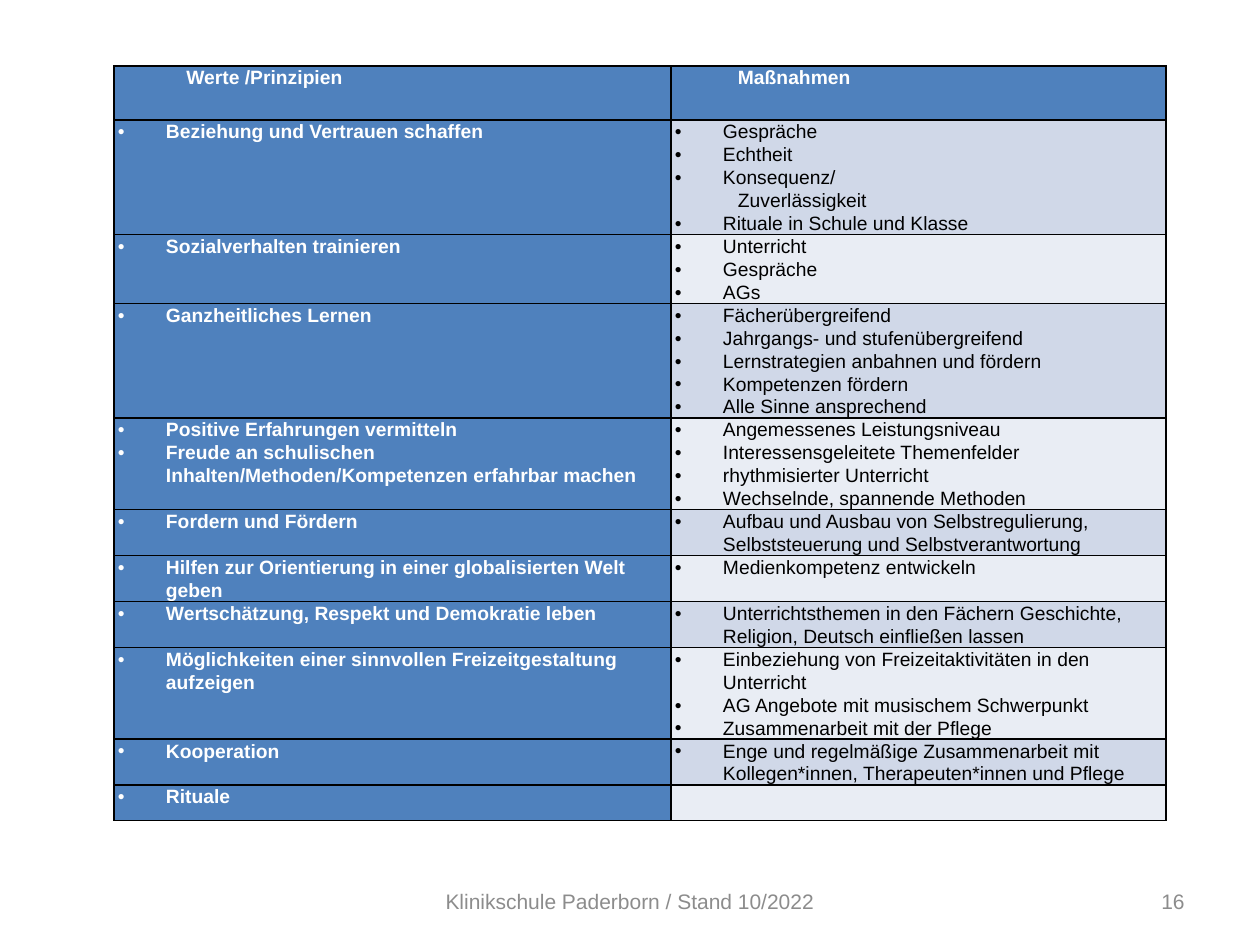
from dataclasses import dataclass

from lxml.etree import SubElement
from pptx import Presentation
from pptx.dml.color import RGBColor
from pptx.enum.text import MSO_ANCHOR as Anchor, PP_ALIGN as Align
from pptx.oxml.ns import qn
from pptx.util import Pt

PX = 914400 // 126


@dataclass(frozen=True)
class Theme:
    """Colours, font and type sizes of the slide."""
    font: str = "Arial"
    table_size: int = 11
    footer_size: int = 12
    head: str = "4F81BD"
    bands: tuple = ("D0D8E8", "E9EDF4")
    light: str = "FFFFFF"
    dark: str = "000000"
    muted: str = "8C8C8C"


THEME = Theme()
BULLET, INDENT = 48, 63
LINE, HEADER = 22, 54
HEADINGS = (" Werte /Prinzipien", "Maßnahmen")
INDENTED = {*HEADINGS, "Zuverlässigkeit"}
ROWS = [
    (5, ["Beziehung und Vertrauen schaffen"],
     ["Gespräche", "Echtheit", "Konsequenz/", "Zuverlässigkeit", "Rituale in Schule und Klasse"]),
    (3, ["Sozialverhalten trainieren"], ["Unterricht", "Gespräche", "AGs"]),
    (5, ["Ganzheitliches Lernen"],
     ["Fächerübergreifend", "Jahrgangs- und stufenübergreifend",
      "Lernstrategien anbahnen und fördern", "Kompetenzen fördern", "Alle Sinne ansprechend"]),
    (4, ["Positive Erfahrungen vermitteln",
         "Freude an schulischen Inhalten/Methoden/Kompetenzen erfahrbar machen"],
     ["Angemessenes Leistungsniveau", "Interessensgeleitete Themenfelder",
      "rhythmisierter Unterricht", "Wechselnde, spannende Methoden"]),
    (2, ["Fordern und Fördern"],
     ["Aufbau und Ausbau von Selbstregulierung, Selbststeuerung und Selbstverantwortung"]),
    (2, ["Hilfen zur Orientierung in einer globalisierten Welt geben"],
     ["Medienkompetenz entwickeln"]),
    (2, ["Wertschätzung, Respekt und Demokratie leben"],
     ["Unterrichtsthemen in den Fächern Geschichte, Religion, Deutsch einfließen lassen"]),
    (4, ["Möglichkeiten einer sinnvollen Freizeitgestaltung aufzeigen"],
     ["Einbeziehung von Freizeitaktivitäten in den Unterricht",
      "AG Angebote mit musischem Schwerpunkt", "Zusammenarbeit mit der Pflege"]),
    (2, ["Kooperation"],
     ["Enge und regelmäßige Zusammenarbeit mit Kollegen*innen, Therapeuten*innen und Pflege"]),
    (1, ["Rituale"], [""]),
]


def apply(target, values):
    """Set each attribute of the target from a dict."""
    for name, value in values.items():
        setattr(target, name, value)


def add_run(paragraph, text, size, color, bold=False):
    """Append one formatted run to a paragraph."""
    run = paragraph.add_run()
    run.text = text
    apply(run.font, {"name": THEME.font, "size": Pt(size), "bold": bold})
    run.font.color.rgb = RGBColor.from_string(color)


def set_indent(paragraph, bulleted):
    """Give a paragraph a hanging bullet or a plain left indent."""
    properties = paragraph._p.get_or_add_pPr()
    properties.set("marL", str((BULLET if bulleted else INDENT) * PX))
    properties.set("indent", str(-BULLET * PX if bulleted else 0))
    if bulleted:
        SubElement(properties, qn("a:buFont"), typeface=THEME.font)
        SubElement(properties, qn("a:buChar"), char="•")
    else:
        SubElement(properties, qn("a:buNone"))


def add_borders(cell):
    """Draw a one-point line on all four sides of a cell."""
    properties = cell._tc.get_or_add_tcPr()
    for side in ("lnL", "lnR", "lnT", "lnB"):
        line = SubElement(properties, qn(f"a:{side}"), w=str(Pt(1)))
        fill = SubElement(line, qn("a:solidFill"))
        SubElement(fill, qn("a:srgbClr"), val=THEME.dark)


def fill_cell(cell, texts, background, color, bold):
    """Write the paragraphs of a cell and format it."""
    apply(cell, {"margin_left": 4 * PX, "margin_right": 4 * PX,
                 "margin_top": 0, "margin_bottom": 0})
    add_borders(cell)
    cell.fill.solid()
    cell.fill.fore_color.rgb = RGBColor.from_string(background)
    frame = cell.text_frame
    for index, text in enumerate(texts):
        paragraph = frame.add_paragraph() if index else frame.paragraphs[0]
        paragraph.line_spacing = 1.07
        set_indent(paragraph, text not in INDENTED)
        add_run(paragraph, text, THEME.table_size, color, bold)


def add_values_table(slide, left, top, widths):
    """Place the table of values and measures."""
    heights = [HEADER] + [LINE * lines for lines, *_ in ROWS]
    box = (left, top, sum(widths), sum(heights))
    table = slide.shapes.add_table(len(heights), len(widths), *(n * PX for n in box)).table
    apply(table, {"first_row": False, "horz_banding": False})
    for column, width in zip(table.columns, widths):
        column.width = width * PX
    for row, height in zip(table.rows, heights):
        row.height = height * PX
    for column, heading in enumerate(HEADINGS):
        fill_cell(table.cell(0, column), [heading], THEME.head, THEME.light, True)
    for index, (_, values, measures) in enumerate(ROWS):
        fill_cell(table.cell(index + 1, 0), values, THEME.head, THEME.light, True)
        fill_cell(table.cell(index + 1, 1), measures, THEME.bands[index % 2], THEME.dark, False)


def add_footer_text(slide, box, text, alignment):
    """Place one muted line of footer text in its box."""
    frame = slide.shapes.add_textbox(*(n * PX for n in box)).text_frame
    apply(frame, {"word_wrap": True, "vertical_anchor": Anchor.MIDDLE})
    frame.paragraphs[0].alignment = alignment
    add_run(frame.paragraphs[0], text, THEME.footer_size, THEME.muted)


def main():
    """Build and save the slide."""
    presentation = Presentation()
    apply(presentation, {"slide_width": 1260 * PX, "slide_height": 945 * PX})
    slide = presentation.slides.add_slide(presentation.slide_layouts[6])
    add_values_table(slide, 114, 66, (557, 495))
    add_footer_text(slide, (430, 876, 400, 50), "Klinikschule Paderborn / Stand 10/2022", Align.CENTER)
    add_footer_text(slide, (903, 876, 294, 50), "16", Align.RIGHT)
    presentation.save("out.pptx")


if __name__ == "__main__":
    main()
